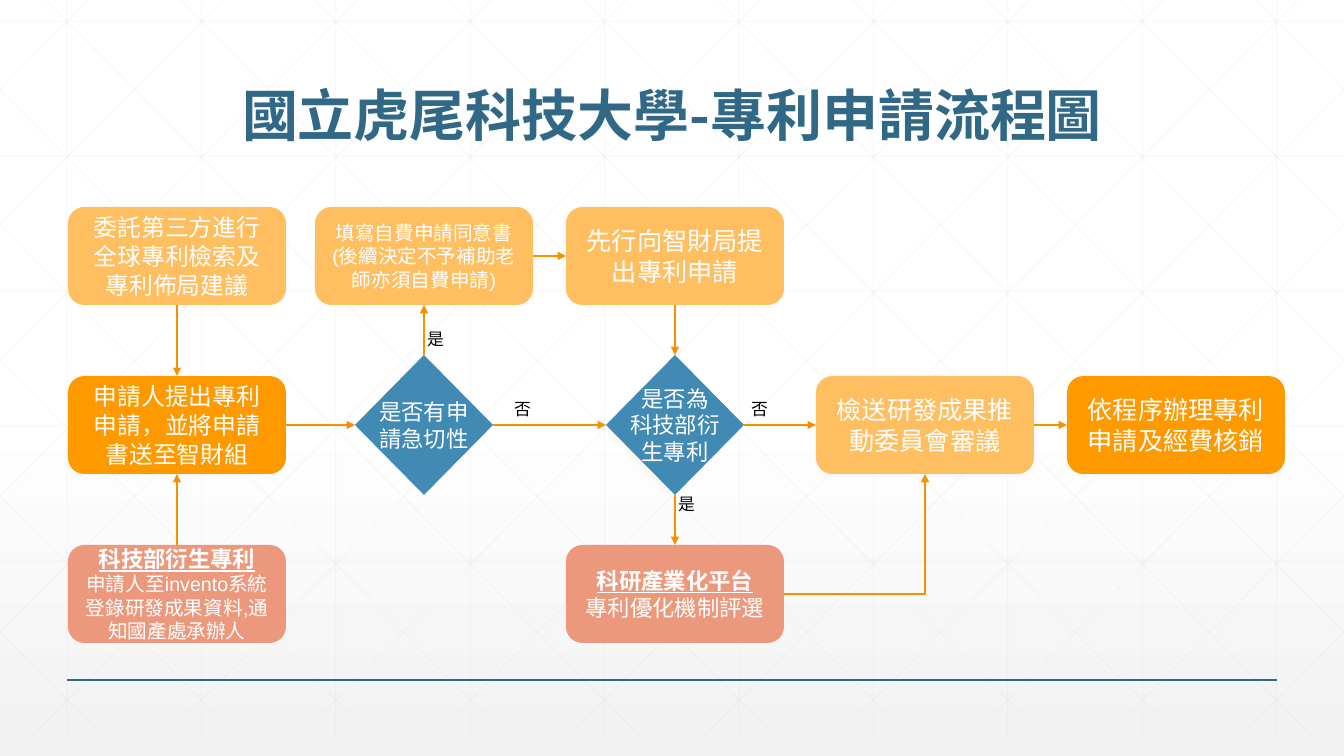
from lxml import etree
from pptx import Presentation
from pptx.dml.color import RGBColor
from pptx.enum.shapes import MSO_CONNECTOR, MSO_SHAPE
from pptx.enum.text import MSO_ANCHOR, PP_ALIGN
from pptx.oxml.ns import qn
from pptx.util import Emu, Pt

STRAIGHT, ELBOW = MSO_CONNECTOR.STRAIGHT, MSO_CONNECTOR.ELBOW
ROUNDED, DIAMOND = MSO_SHAPE.ROUNDED_RECTANGLE, MSO_SHAPE.DIAMOND
MIDDLE, CENTER = MSO_ANCHOR.MIDDLE, PP_ALIGN.CENTER
TOP, LEFT, BOTTOM, RIGHT = range(4)
PAGE_W, PAGE_H = 1344, 756
PX = 12192000 / PAGE_W
FONT, CJK_FONT = "Arial", "Noto Sans CJK TC"
COLORS = {
    "white": "FFFFFF", "black": "000000", "mist": "F2F2F2", "mesh": "D9D9D9",
    "navy": "316886", "blue": "418AB3", "light": "FFBF61", "orange": "FF9900",
    "salmon": "EC987D", "arrow": "F69200",
}
COLORS = {name: RGBColor.from_string(value) for name, value in COLORS.items()}


def add_line(kind, ends, color, width):
    line = page.shapes.add_connector(kind, *[Emu(round(n * PX)) for n in ends])
    line.line.color.rgb = COLORS[color]
    line.line.width = Pt(width)
    etree.SubElement(line.element.spPr, qn("a:effectLst"))
    return line


def write_text(frame, lines, sizes, color, font=FONT, bold_first=False):
    frame.text = "\n".join(lines)
    frame.vertical_anchor = MIDDLE
    for index, (para, size) in enumerate(zip(frame.paragraphs, sizes)):
        para.alignment = CENTER
        span = para.runs[0]
        span.font.name = font
        span.font.size = Pt(size)
        span.font.color.rgb = COLORS[color]
        span.font.bold = bold_first and index == 0
        east_asian = etree.SubElement(span.font._element, qn("a:ea"))
        east_asian.set("typeface", CJK_FONT)


deck = Presentation()
deck.slide_width, deck.slide_height = Emu(12192000), Emu(6858000)
page = deck.slides.add_slide(deck.slide_layouts[5])

backdrop = page.background.fill
backdrop.gradient()
backdrop.gradient_angle = 270
for stop, position, color in zip(backdrop.gradient_stops, (0.53, 1), ("white", "mist")):
    stop.position = position
    stop.color.rgb = COLORS[color]

MESH_BOTTOM, MESH_STEP, MESH_RUN = 735, PAGE_W / 10, 0.99
mesh = [(67 + MESH_STEP * i, 0, 67 + MESH_STEP * i, MESH_BOTTOM) for i in range(10)]
mesh += [(0, 21 + 135 * i, PAGE_W, 21 + 135 * i) for i in range(6)]
for i in range(-5, 10):
    start = 46 + MESH_STEP * i
    y1 = max(0, -start / MESH_RUN)
    y2 = min(MESH_BOTTOM, (PAGE_W - start) / MESH_RUN)
    x1, x2 = start + y1 * MESH_RUN, start + y2 * MESH_RUN
    mesh += [(x1, y1, x2, y2), (PAGE_W - x1, y1, PAGE_W - x2, y2)]
for ends in mesh:
    line = add_line(STRAIGHT, ends, "mesh", 0.5)
    tint = line.element.spPr.find(".//" + qn("a:srgbClr"))
    etree.SubElement(tint, qn("a:alpha")).set("val", "25000")
add_line(STRAIGHT, (67, 680, 1277, 680), "navy", 1)

title = page.shapes.title
title.element.getparent().append(title.element)
title.left, title.top, title.width, title.height = [
    Emu(round(n * PX)) for n in (143, 55, 1058, 126)]
write_text(title.text_frame, ["國立虎尾科技大學-專利申請流程圖"], [40], "navy", CJK_FONT, True)
title.text_frame.paragraphs[0].line_spacing = 0.9

COLUMNS = (68, 315, 566, 816, 1067)
ROWS = (207, 376, 545)
BOX_W, BOX_H = 218, 98
STEPS = [
    ("search", 0, 0, "light", ["委託第三方進行全球專利檢索及專利佈局建議"], [17]),
    ("consent", 1, 0, "light", ["填寫自費申請同意書(後續決定不予補助老師亦須自費申請)"], [14]),
    ("file first", 2, 0, "light", ["先行向智財局提出專利申請"], [18]),
    ("apply", 0, 1, "orange", ["申請人提出專利申請，並將申請書送至智財組"], [17]),
    ("review", 3, 1, "light", ["檢送研發成果推動委員會審議"], [18]),
    ("process", 4, 1, "orange", ["依程序辦理專利申請及經費核銷"], [18]),
    ("register", 0, 2, "salmon",
     ["科技部衍生專利", "申請人至invento系統登錄研發成果資料,通知國產處承辦人"], [16, 14]),
    ("platform", 2, 2, "salmon", ["科研產業化平台", "專利優化機制評選"], [16, 16]),
]
nodes = {}
for name, column, row, color, lines, sizes in STEPS:
    box = page.shapes.add_shape(
        ROUNDED, *[Emu(round(n * PX)) for n in (COLUMNS[column], ROWS[row], BOX_W, BOX_H)])
    box.shadow.inherit = False
    box.fill.solid()
    box.fill.fore_color.rgb = COLORS[color]
    box.line.fill.background()
    headed = len(lines) > 1
    write_text(box.text_frame, lines, sizes, "white", bold_first=headed)
    if headed:
        box.text_frame.paragraphs[0].runs[0].font.underline = True
    nodes[name] = box

DECISIONS = [
    ("urgent", 355, ["是否有申請急切性"]),
    ("derived", 606, ["是否為", "科技部衍生專利"]),
]
for name, left, lines in DECISIONS:
    diamond = page.shapes.add_shape(
        DIAMOND, *[Emu(round(n * PX)) for n in (left, 355, 138, 140)])
    diamond.shadow.inherit = False
    diamond.fill.solid()
    diamond.fill.fore_color.rgb = COLORS["blue"]
    diamond.line.fill.background()
    nodes[name] = diamond
    question = page.shapes.add_textbox(
        *[Emu(round(n * PX)) for n in (left + 11, 379, 116, 92)])
    question.text_frame.word_wrap = True
    write_text(question.text_frame, lines, [16, 16], "white")

ARROWS = [
    ("search", BOTTOM, "apply", TOP),
    ("register", TOP, "apply", BOTTOM),
    ("apply", RIGHT, "urgent", LEFT),
    ("urgent", TOP, "consent", BOTTOM),
    ("urgent", RIGHT, "derived", LEFT),
    ("consent", RIGHT, "file first", LEFT),
    ("file first", BOTTOM, "derived", TOP),
    ("derived", RIGHT, "review", LEFT),
    ("derived", BOTTOM, "platform", TOP),
    ("platform", RIGHT, "review", BOTTOM),
    ("review", RIGHT, "process", LEFT),
]
for source, source_side, target, target_side in ARROWS:
    bent = source == "platform"
    arrow = add_line(ELBOW if bent else STRAIGHT, (0, 0, 0, 0), "arrow", 1 if bent else 1.5)
    arrow.begin_connect(nodes[source], source_side)
    arrow.end_connect(nodes[target], target_side)
    if bent:
        arrow.element.spPr.find(qn("a:prstGeom")).set("prst", "bentConnector2")
    outline = arrow.element.spPr.find(qn("a:ln"))
    etree.SubElement(outline, qn("a:tailEnd")).set("type", "triangle")

for answer, left, top in (("是", 417, 324), ("否", 504, 394), ("否", 741, 394), ("是", 668, 489)):
    label = page.shapes.add_textbox(*[Emu(round(n * PX)) for n in (left, top, 37, 30)])
    label.text_frame.word_wrap = False
    write_text(label.text_frame, [answer], [12], "black")

deck.save("out.pptx")
